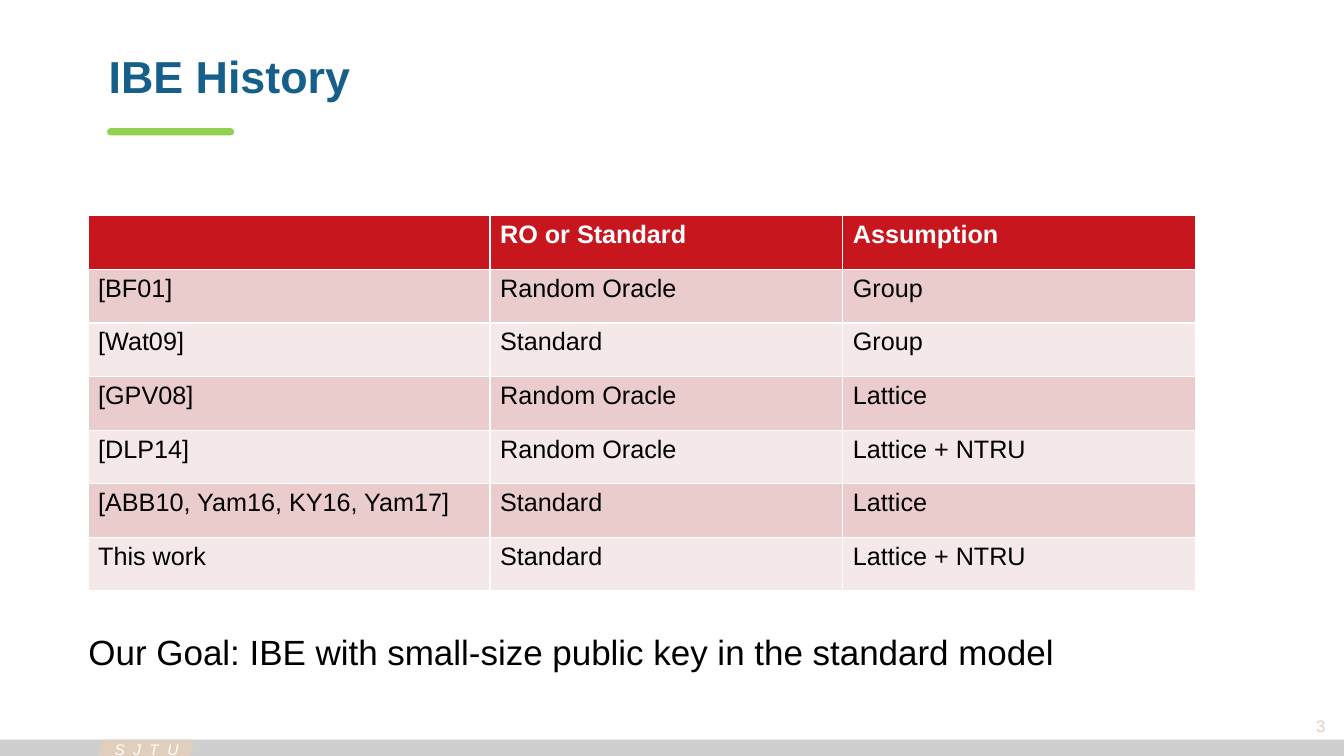
from pptx import Presentation
from pptx.dml.color import RGBColor as RGB
from pptx.enum.shapes import MSO_SHAPE as Kind
from pptx.enum.text import MSO_ANCHOR as Anchor, PP_ALIGN as Align
from pptx.util import Cm, Pt
from lxml.etree import SubElement
from pptx.oxml.ns import qn

# Content
title = "IBE History"
goal = "Our Goal: IBE with small-size public key in the standard model"
school = "SJTU"
page = "3"
rows = [
    ("", "RO or Standard", "Assumption"),
    ("[BF01]", "Random Oracle", "Group"),
    ("[Wat09]", "Standard", "Group"),
    ("[GPV08]", "Random Oracle", "Lattice"),
    ("[DLP14]", "Random Oracle", "Lattice + NTRU"),
    ("[ABB10, Yam16, KY16, Yam17]", "Standard", "Lattice"),
    ("This work", "Standard", "Lattice + NTRU"),
]
widths = (10.13, 8.89, 8.89)
row_h = 1.35


class Theme:
    font = "Arial"
    blue, green, sand, gray = "175F8B", "92D050", "E0CFBD", "BFBFBF"
    head, bands = "C8161E", ("EBCCCD", "F5E8E8")
    white, black = "FFFFFF", "000000"
    big, mid, cell, small, tiny = 32, 25, 18, 12, 11


def style(para, size, color, bold=False, italic=False):
    font = para.font
    font.name, font.size = Theme.font, Pt(size)
    font.bold, font.italic = bold, italic
    font.color.rgb = RGB.from_string(color)


def add_bar(kind, box, color):
    bar = slide.shapes.add_shape(kind, *map(Cm, box))
    bar.shadow.inherit = False
    bar.fill.solid()
    bar.fill.fore_color.rgb = RGB.from_string(color)
    bar.line.fill.background()
    return bar


def add_text(text, box, size, color, anchor=Anchor.TOP, align=Align.LEFT,
             wrap=True, **look):
    frame = slide.shapes.add_textbox(*map(Cm, box)).text_frame
    frame.word_wrap, frame.vertical_anchor = wrap, anchor
    para = frame.paragraphs[0]
    para.text, para.alignment = text, align
    style(para, size, color, **look)
    return para


deck = Presentation()
deck.slide_width, deck.slide_height = Cm(33.87), Cm(19.05)
slide = deck.slides.add_slide(deck.slide_layouts[6])

# Footer band, a quarter transparent, with the school tag
band = add_bar(Kind.RECTANGLE, (0, 18.64, 33.87, 0.41), Theme.gray)
tint = band.fill._xPr.find(".//" + qn("a:srgbClr"))
SubElement(tint, qn("a:alpha"), val="75000")
add_bar(Kind.PARALLELOGRAM, (2.49, 18.64, 2.41, 0.41), Theme.sand)
tag = add_text(school, (2.64, 18.52, 2.36, 0.74), Theme.tiny, Theme.white,
               align=Align.JUSTIFY, wrap=False, italic=True)
tag.runs[0].font._element.set("spc", "600")

# Title and its underline
rule = add_bar(Kind.ROUND_2_SAME_RECTANGLE, (2.7, 3.23, 3.2, 0.18), Theme.green)
rule.adjustments[0] = rule.adjustments[1] = 0.5
add_text(title, (2.49, 1.07, 27.15, 1.65), Theme.big, Theme.blue,
         Anchor.MIDDLE, bold=True)

# Page number and goal
add_text(page, (30.78, 17.81, 2.87, 0.97), Theme.small, Theme.sand,
         Anchor.MIDDLE, Align.RIGHT)
add_text(goal, (1.98, 15.77, 25.55, 1.78), Theme.mid, Theme.black)

# Table of schemes
table = slide.shapes.add_table(
    len(rows), len(widths), Cm(2.22), Cm(5.44),
    Cm(sum(widths)), Cm(row_h * len(rows))).table
for col, width in zip(table.columns, widths):
    col.width = Cm(width)
for r, row in enumerate(rows):
    table.rows[r].height = Cm(row_h)
    top = r == 0
    for c, text in enumerate(row):
        cell = table.cell(r, c)
        cell.text = text
        cell.fill.solid()
        cell.fill.fore_color.rgb = RGB.from_string(
            Theme.head if top else Theme.bands[(r - 1) % 2])
        style(cell.text_frame.paragraphs[0], Theme.cell,
              Theme.white if top else Theme.black, bold=top)

deck.save("out.pptx")
